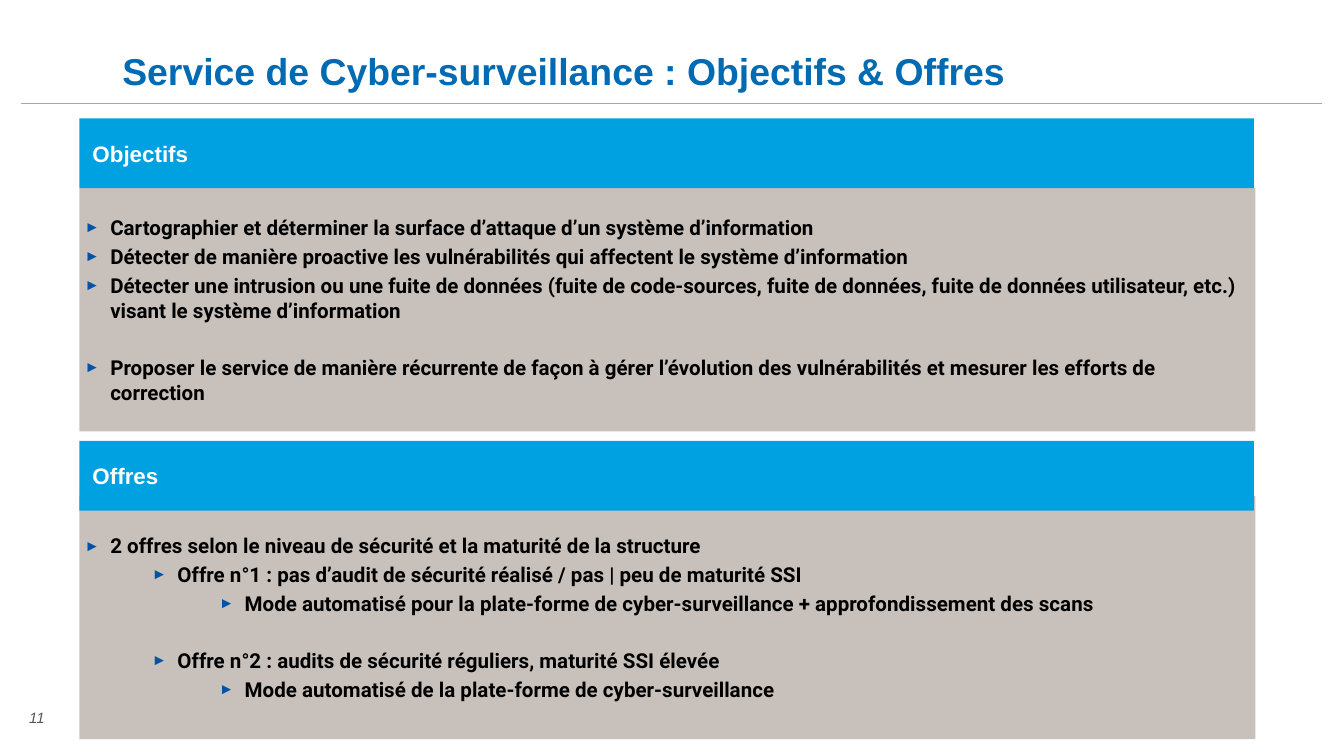
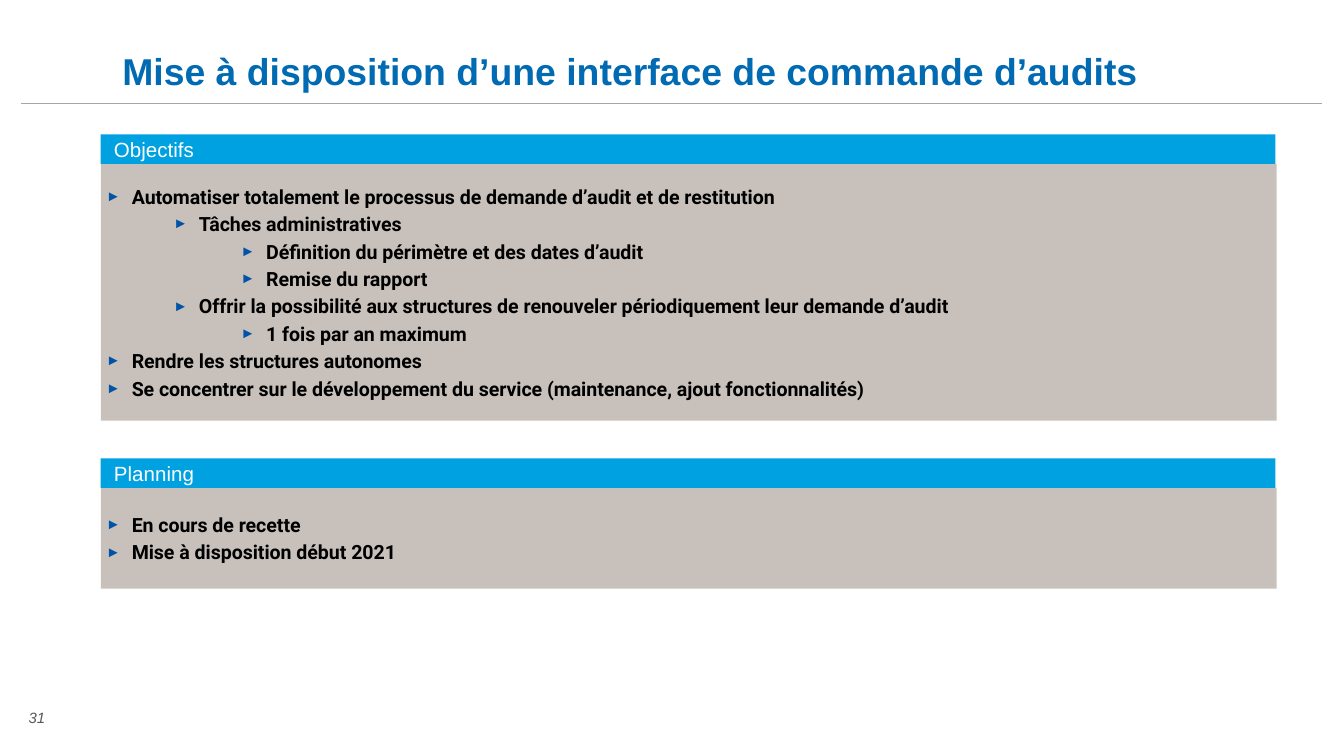
"""Build two slides on a cyber-surveillance service and its audit ordering interface."""
from lxml import etree
from pptx import Presentation
from pptx.enum.shapes import MSO_CONNECTOR, MSO_SHAPE
from pptx.enum.text import MSO_ANCHOR, MSO_AUTO_SIZE, PP_ALIGN
from pptx.dml.color import RGBColor
from pptx.oxml.ns import qn
from pptx.util import Inches, Pt

RECTANGLE, STRAIGHT = MSO_SHAPE.RECTANGLE, MSO_CONNECTOR.STRAIGHT
MIDDLE, BOTTOM = MSO_ANCHOR.MIDDLE, MSO_ANCHOR.BOTTOM
LEFT, CENTER = PP_ALIGN.LEFT, PP_ALIGN.CENTER
NO_FIT = MSO_AUTO_SIZE.NONE

COLUMNS, ROWS = 100, 56.25
CELL = Inches(10) // COLUMNS
BLUE, BAND, PANEL, ARROW = "006AB2", "00A1E0", "BEB6AF", "0053A6"
GREY, RULE, WHITE, BLACK = "575757", "A6A6A6", "FFFFFF", "000000"
TITLE_BOX = (9.1, 1, 88.2, 5.9)
NUMBER_BOX = (1.2, 51.9, 3.1, 3)
RULE_ROW, RULE_MARGIN = 7.7, 1.6
BAND_WIDTH, PANEL_WIDTH = 87.4, 87.5
HANGING, LEVEL_STEP = 1.9, 5
BLANK_LINE = 15.3


def paint(fill, color, alpha=None):
    """Fill with a hex colour, at an optional opacity in percent."""
    fill.solid()
    fill.fore_color.rgb = RGBColor.from_string(color)
    if alpha:
        choice = fill._xPr.find(qn("a:solidFill"))[0]
        etree.SubElement(choice, qn("a:alpha"), val=str(alpha * 1000))


def write(shape, items, box, size, color, font="Arial", bold=False, italic=False,
          align=LEFT, anchor=MIDDLE, inset=(0, 0), leading=None, bullets=False):
    """Place a shape on the grid and write (level, text, gap before) items in it."""
    shape.left, shape.top, shape.width, shape.height = (int(n * CELL) for n in box)
    frame = shape.text_frame
    frame.auto_size, frame.word_wrap, frame.vertical_anchor = NO_FIT, True, anchor
    frame.margin_left = frame.margin_right = int(inset[0] * CELL)
    frame.margin_top = frame.margin_bottom = int(inset[1] * CELL)
    for index, (level, text, gap) in enumerate(items):
        paragraph = frame.add_paragraph() if index else frame.paragraphs[0]
        if bullets:
            props = paragraph._p.get_or_add_pPr()
            props.set("marL", str(int((HANGING + level * LEVEL_STEP) * CELL)))
            props.set("indent", str(int(-HANGING * CELL)))
            tint = etree.SubElement(props, qn("a:buClr"))
            etree.SubElement(tint, qn("a:srgbClr"), val=ARROW)
            etree.SubElement(props, qn("a:buSzPct"), val="75000")
            etree.SubElement(props, qn("a:buChar"), char="►")
        paragraph.level, paragraph.alignment = level, align
        paragraph.space_before = Pt(0.2 * size + gap if index else 0)
        if leading:
            paragraph.line_spacing = Pt(leading)
        run = paragraph.add_run()
        run.text = text
        run.font.name, run.font.size = font, Pt(size)
        run.font.bold, run.font.italic = bold, italic
        paint(run.font.fill, color)


topics = [
    dict(
        title="Service de Cyber-surveillance : Objectifs & Offres", number="11",
        left=5.9, band_height=5.2, band_size=12, band_bold=True, list_size=11,
        sections=[
            ("Objectifs", 8.8, 14, 18.1, [
                (0, "Cartographier et déterminer la surface d’attaque d’un système d’information", 0),
                (0, "Détecter de manière proactive les vulnérabilités qui affectent le système d’information", 0),
                (0, "Détecter une intrusion ou une fuite de données (fuite de code-sources, fuite de données, "
                    "fuite de données utilisateur, etc.) visant le système d’information", 0),
                (0, "Proposer le service de manière récurrente de façon à gérer l’évolution des vulnérabilités "
                    "et mesurer les efforts de correction", BLANK_LINE),
            ]),
            ("Offres", 32.8, 36.9, 18.1, [
                (0, "2 offres selon le niveau de sécurité et la maturité de la structure", 0),
                (1, "Offre n°1 : pas d’audit de sécurité réalisé / pas | peu de maturité SSI", 0),
                (2, "Mode automatisé pour la plate-forme de cyber-surveillance + approfondissement des scans", 0),
                (1, "Offre n°2 : audits de sécurité réguliers, maturité SSI élevée", BLANK_LINE),
                (2, "Mode automatisé de la plate-forme de cyber-surveillance", 0),
            ]),
        ],
    ),
    dict(
        title="Mise à disposition d’une interface de commande d’audits", number="31",
        left=7.5, band_height=2.2, band_size=11, band_bold=False, list_size=10.5,
        sections=[
            ("Objectifs", 10, 12.2, 19.1, [
                (0, "Automatiser totalement le processus de demande d’audit et de restitution", 0),
                (1, "Tâches administratives", 0),
                (2, "Définition du périmètre et des dates d’audit", 0),
                (2, "Remise du rapport", 0),
                (1, "Offrir la possibilité aux structures de renouveler périodiquement leur demande d’audit", 0),
                (2, "1 fois par an maximum", 0),
                (0, "Rendre les structures autonomes", 0),
                (0, "Se concentrer sur le développement du service (maintenance, ajout fonctionnalités)", 0),
            ]),
            ("Planning", 34.1, 36.3, 7.5, [
                (0, "En cours de recette", 0),
                (0, "Mise à disposition début 2021", 0),
            ]),
        ],
    ),
]

deck = Presentation()
deck.slide_width, deck.slide_height = COLUMNS * CELL, int(ROWS * CELL)
two_lists = deck.slide_layouts[3]

for topic in topics:
    slide = deck.slides.add_slide(two_lists)
    rule_y = int(RULE_ROW * CELL)
    rule = slide.shapes.add_connector(STRAIGHT, int(RULE_MARGIN * CELL), rule_y,
                                      int((COLUMNS - RULE_MARGIN) * CELL), rule_y)
    rule.line.width = Pt(0.25)
    paint(rule.line.fill, RULE)
    etree.SubElement(rule._element.spPr, qn("a:effectLst"))

    write(slide.shapes.title, [(0, topic["title"], 0)], TITLE_BOX, 20, BLUE,
          bold=True, anchor=BOTTOM, leading=22)
    page_number = slide.shapes.add_textbox(0, 0, CELL, CELL)
    write(page_number, [(0, topic["number"], 0)], NUMBER_BOX, 8, GREY,
          italic=True, align=CENTER)

    for slot, (heading, band_top, panel_top, panel_height, points) in enumerate(topic["sections"], 1):
        panel = slide.placeholders[slot]
        write(panel, points, (topic["left"], panel_top, PANEL_WIDTH, panel_height),
              topic["list_size"], BLACK, font="Roboto", bold=True,
              inset=(0.4, 0.4), bullets=True)
        paint(panel.fill, PANEL, alpha=84)

        band = slide.shapes.add_shape(RECTANGLE, 0, 0, CELL, CELL)
        band.shadow.inherit = False
        paint(band.fill, BAND)
        band.line.fill.background()
        write(band, [(0, heading, 0)],
              (topic["left"], band_top, BAND_WIDTH, topic["band_height"]),
              topic["band_size"], WHITE, bold=topic["band_bold"], inset=(1, 0.5))

deck.save("out.pptx")
